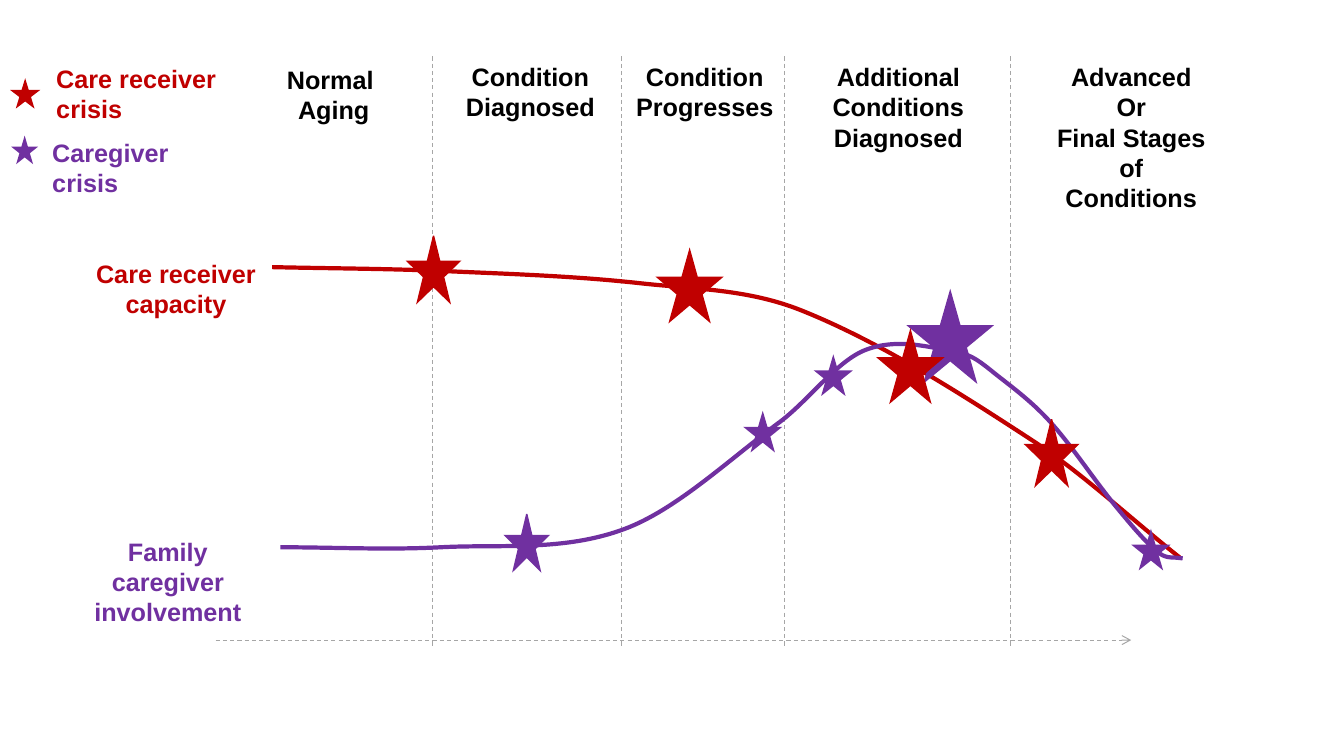
from itertools import pairwise

from lxml import etree
from pptx import Presentation
from pptx.dml.color import RGBColor
from pptx.enum.dml import MSO_LINE
from pptx.enum.shapes import MSO_CONNECTOR, MSO_SHAPE
from pptx.enum.text import PP_ALIGN
from pptx.oxml.ns import qn
from pptx.util import Inches, Pt

STRAIGHT = MSO_CONNECTOR.STRAIGHT
STAR = MSO_SHAPE.STAR_5_POINT
DASH = MSO_LINE.DASH
LEFT, CENTER = PP_ALIGN.LEFT, PP_ALIGN.CENTER
RECEIVER_RED, CAREGIVER_PURPLE = "C00000", "7030A0"
GRAY, BLACK = "A6A6A6", "000000"

deck = Presentation()
deck.slide_width, deck.slide_height = Inches(13.33), Inches(7.5)
page = deck.slides.add_slide(deck.slide_layouts[6])
shapes = page.shapes


def color(value):
    return RGBColor.from_string(value)


def add_text(text, left, top, width, height, ink=BLACK, align=CENTER):
    box = shapes.add_textbox(Inches(left), Inches(top), Inches(width), Inches(height))
    frame = box.text_frame
    frame.word_wrap = True
    for index, line in enumerate(text.split("\n")):
        para = frame.paragraphs[0] if index == 0 else frame.add_paragraph()
        para.alignment = align
        span = para.add_run()
        span.text = line
        span.font.name = "Arial"
        span.font.size = Pt(18)
        span.font.bold = True
        span.font.color.rgb = color(ink)


chart_top, chart_bottom = 0.56, 6.41
stage_dividers = [(x, chart_top, x, chart_bottom) for x in (4.29, 6.16, 7.78, 10.02)]
time_axis = (2.14, 6.35, 11.22, 6.35)
for ends in stage_dividers + [time_axis]:
    rule = shapes.add_connector(STRAIGHT, *[Inches(value) for value in ends])
    rule.line.color.rgb = color(GRAY)
    rule.line.width = Pt(0.75)
    rule.line.dash_style = DASH
    properties = rule.element.spPr
    etree.SubElement(properties, qn("a:effectLst"))
    if ends == time_axis:
        outline = properties.find(qn("a:ln"))
        etree.SubElement(outline, qn("a:tailEnd"), type="arrow")

stage_width = 1.92
stages = [
    ("Normal \nAging", 2.35, 0.59, 0.71),
    ("Condition Diagnosed", 4.3, chart_top, 0.73),
    ("Condition\nProgresses", 6.03, chart_top, 0.97),
    ("Additional\nConditions\nDiagnosed", 7.95, chart_top, 1.04),
    ("Advanced\nOr\nFinal Stages of\nConditions", 10.26, chart_top, 1.61),
]
for text, left, top, height in stages:
    add_text(text, left, top, stage_width, height)

add_text("Care receiver\ncapacity", 0.82, 2.51, 1.85, 0.71, ink=RECEIVER_RED)
add_text("Family caregiver\ninvolvement", 0.65, 5.27, 2.03, 1.01, ink=CAREGIVER_PURPLE)

capacity_knots = [(2.7, 2.65), (4.42, 2.69), (6.35, 2.81), (7.95, 3.08), (10.24, 4.37), (11.7, 5.53)]
involvement_knots = [
    (2.78, 5.43), (4.37, 5.43), (6.19, 5.25), (7.73, 4.19), (8.59, 3.47), (9.55, 3.51),
    (9.91, 3.74), (10.42, 4.19), (11.08, 5.04), (11.5, 5.49), (11.73, 5.54),
]
for knots, ink in ((capacity_knots, RECEIVER_RED), (involvement_knots, CAREGIVER_PURPLE)):
    before_knots = knots[:1] + knots[:-1]
    after_knots = knots[1:] + knots[-1:]
    slopes = [
        (after[1] - before[1]) / (after[0] - before[0])
        for before, after in zip(before_knots, after_knots)
    ]
    bezier_points = []
    for ((x1, y1), slope1), ((x2, y2), slope2) in pairwise(zip(knots, slopes)):
        third = (x2 - x1) / 3
        bezier_points += [
            (x1 + third, y1 + slope1 * third),
            (x2 - third, y2 - slope2 * third),
            (x2, y2),
        ]
    start_x, start_y = knots[0]
    builder = shapes.build_freeform(Inches(start_x), Inches(start_y))
    builder.add_line_segments([(Inches(x), Inches(y)) for x, y in bezier_points], close=False)
    curve = builder.convert_to_shape()
    curve.shadow.inherit = False
    curve.fill.background()
    curve.line.color.rgb = color(ink)
    curve.line.width = Pt(3)
    track = next(curve.element.iter(qn("a:path")))
    segments = track.findall(qn("a:lnTo"))
    for first in range(0, len(segments), 3):
        bezier = etree.SubElement(track, qn("a:cubicBezTo"))
        for segment in segments[first:first + 3]:
            bezier.append(segment[0])
            track.remove(segment)

add_text("Care receiver crisis", 0.46, 0.58, 1.9, 0.71, ink=RECEIVER_RED, align=LEFT)
add_text("Caregiver crisis", 0.42, 1.31, 1.64, 0.71, ink=CAREGIVER_PURPLE, align=LEFT)

legend_caregiver, legend_receiver = (0.23, 0.24), (0.26, 0.26)
minor, early, moderate, major, peak = (0.35, 0.37), (0.43, 0.56), (0.52, 0.66), (0.64, 0.71), (0.83, 0.9)
crises = [
    (CAREGIVER_PURPLE, legend_caregiver, [(0.13, 1.37)]),
    (RECEIVER_RED, legend_receiver, [(0.12, 0.8)]),
    (CAREGIVER_PURPLE, early, [(5.01, 5.1)]),
    (CAREGIVER_PURPLE, minor, [(7.39, 4.1), (8.09, 3.54), (11.24, 5.27)]),
    (CAREGIVER_PURPLE, peak, [(9.01, 2.89)]),
    (RECEIVER_RED, moderate, [(4.04, 2.34), (10.17, 4.16)]),
    (RECEIVER_RED, major, [(6.52, 2.48), (8.71, 3.28)]),
]
for ink, (width, height), corners in crises:
    for left, top in corners:
        star = shapes.add_shape(STAR, Inches(left), Inches(top), Inches(width), Inches(height))
        star.shadow.inherit = False
        star.fill.solid()
        star.fill.fore_color.rgb = color(ink)
        star.line.color.rgb = color(ink)
        star.line.width = Pt(1)
        outline = star.element.spPr.find(qn("a:ln"))
        etree.SubElement(outline, qn("a:miter"), lim="800000")

deck.save("out.pptx")
